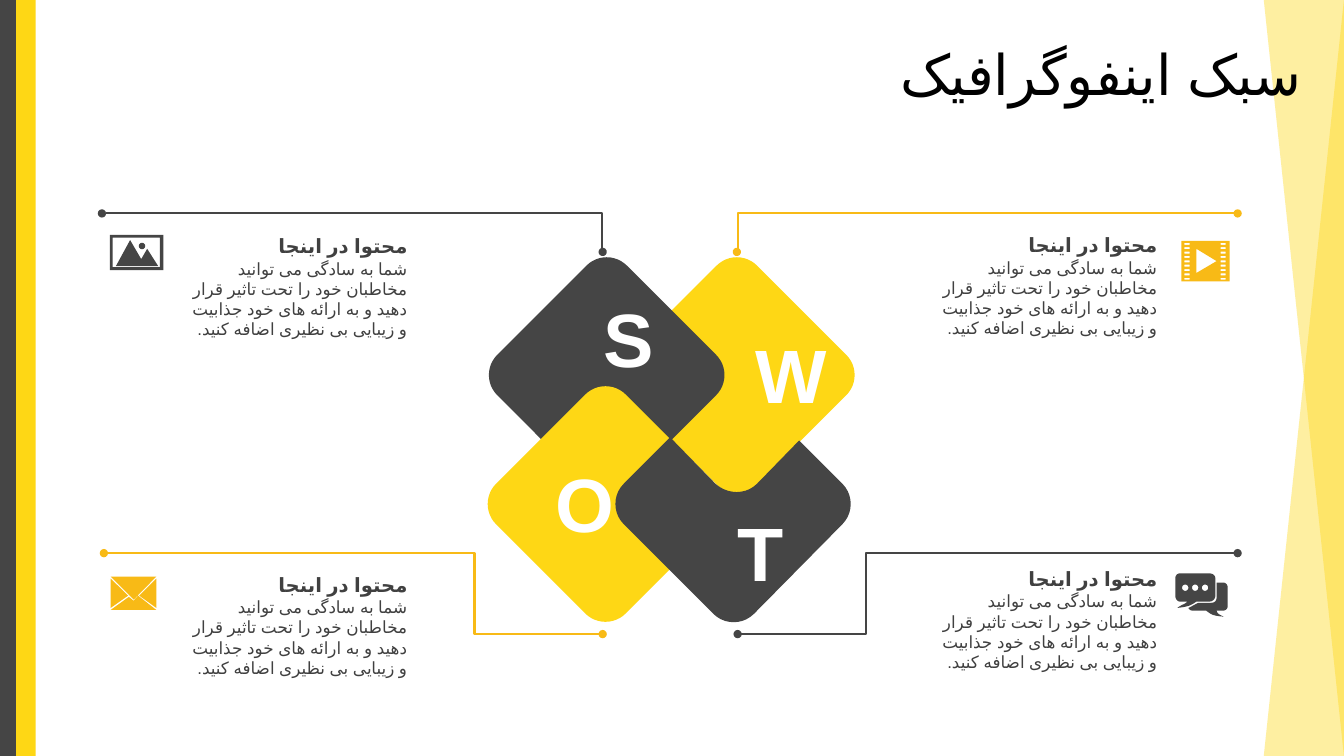
from math import cos, pi, sin

from lxml import etree
from pptx import Presentation
from pptx.dml.color import RGBColor
from pptx.enum.lang import MSO_LANGUAGE_ID
from pptx.enum.shapes import MSO_CONNECTOR, MSO_SHAPE
from pptx.enum.text import MSO_ANCHOR, MSO_AUTO_SIZE, PP_ALIGN
from pptx.oxml.ns import qn
from pptx.util import Cm, Pt

RECTANGLE = MSO_SHAPE.RECTANGLE
ROUNDED = MSO_SHAPE.ROUNDED_RECTANGLE
TRIANGLE = MSO_SHAPE.RIGHT_TRIANGLE
ELBOW = MSO_CONNECTOR.ELBOW
TOP, MIDDLE = MSO_ANCHOR.TOP, MSO_ANCHOR.MIDDLE
RIGHT = PP_ALIGN.RIGHT
GROW = MSO_AUTO_SIZE.SHAPE_TO_FIT_TEXT
FARSI = MSO_LANGUAGE_ID.FARSI

COLORS = {"yellow": "FED715", "dark": "454545", "amber": "F8BA16",
          "text": "404040", "white": "FFFFFF", "black": "000000"}
WIDTH, HEIGHT = 33.87, 19.05
HEADING = "محتوا در اینجا"
BODY = ("شما به سادگی می توانید مخاطبان خود را تحت تاثیر قرار دهید و به ارائه "
        "های خود جذابیت و زیبایی بی نظیری اضافه کنید.")


# Outline helpers, all in centimetres
def box(left, top, width, height):
    right, bottom = left + width, top + height
    return [(left, top), (right, top), (right, bottom), (left, bottom)]


def circle(x, y, radius, steps=24):
    return [(x + radius * cos(2 * pi * i / steps), y + radius * sin(2 * pi * i / steps))
            for i in range(steps)]


def curved(outline, steps=10):
    """Turn each six-number entry (a cubic curve) into short straight steps."""
    points = []
    for entry in outline:
        if len(entry) == 2:
            points.append(entry)
            continue
        knots = [points[-1], entry[:2], entry[2:4], entry[4:]]
        for step in range(1, steps + 1):
            t = step / steps
            weights = ((1 - t) ** 3, 3 * t * (1 - t) ** 2, 3 * t * t * (1 - t), t ** 3)
            points.append(tuple(sum(w * knot[axis] for w, knot in zip(weights, knots))
                                for axis in (0, 1)))
    return points


class SlideBuilder:
    font = "Arial"
    line_width = 1.5

    def __init__(self, slide):
        self.slide = slide
        self.shapes = slide.shapes

    def color(self, name):
        return RGBColor.from_string(COLORS[name])

    def paint(self, shape, color):
        shape.shadow.inherit = False
        shape.fill.solid()
        shape.fill.fore_color.rgb = self.color(color)
        shape.line.fill.background()

    def shape(self, kind, frame, color, rotation=0, corner=None, flips=(), alpha=None):
        shape = self.shapes.add_shape(kind, *map(Cm, frame))
        self.paint(shape, color)
        shape.rotation = rotation
        if corner is not None:
            shape.adjustments[0] = corner
        for flip in flips:
            shape._element.spPr.find(qn("a:xfrm")).set(flip, "1")
        if alpha is not None:
            fill = shape._element.spPr.find(qn("a:solidFill"))
            etree.SubElement(fill[0], qn("a:alpha")).set("val", str(alpha * 1000))

    def freeform(self, contours, color):
        contours = [[(Cm(x), Cm(y)) for x, y in contour] for contour in contours]
        builder = self.shapes.build_freeform(*contours[0][0], scale=1.0)
        for index, contour in enumerate(contours):
            if index:
                builder.move_to(*contour[0])
            builder.add_line_segments(contour[1:], close=True)
        self.paint(builder.convert_to_shape(), color)

    def text(self, words, frame, size, color, bold=False, anchor=TOP, grow=True, **spacing):
        text_frame = self.shapes.add_textbox(*map(Cm, frame)).text_frame
        text_frame.word_wrap = True
        text_frame.vertical_anchor = anchor
        if grow:
            text_frame.auto_size = GROW
        paragraph = text_frame.paragraphs[0]
        for name, value in {"alignment": RIGHT, **spacing}.items():
            setattr(paragraph, name, value)
        paragraph._p.get_or_add_pPr().set("rtl", "1")
        run = paragraph.add_run()
        run.text = words
        for name, value in {"name": self.font, "size": Pt(size), "bold": bold,
                            "language_id": FARSI}.items():
            setattr(run.font, name, value)
        run.font.color.rgb = self.color(color)
        etree.SubElement(run._r.get_or_add_rPr(), qn("a:cs")).set("typeface", self.font)

    def connector(self, start, end, bend, color):
        connector = self.shapes.add_connector(ELBOW, *map(Cm, start + end))
        connector.line.width = Pt(self.line_width)
        connector.line.color.rgb = self.color(color)
        properties = connector._element.spPr
        guides = properties.find(qn("a:prstGeom")).get_or_add_avLst()
        etree.SubElement(guides, qn("a:gd"), name="adj1", fmla=f"val {bend}")
        for end_name in ("a:headEnd", "a:tailEnd"):
            etree.SubElement(properties.find(qn("a:ln")), qn(end_name), type="oval")
        etree.SubElement(properties, qn("a:effectLst"))


def main():
    presentation = Presentation()
    presentation.slide_width, presentation.slide_height = Cm(WIDTH), Cm(HEIGHT)
    builder = SlideBuilder(presentation.slides.add_slide(presentation.slide_layouts[6]))

    # Side decoration
    edge = (31.85, 0, 2.02, HEIGHT)
    builder.shape(TRIANGLE, edge, "yellow", flips=("flipH", "flipV"), alpha=40)
    for left, color in ((0, "dark"), (0.41, "yellow")):
        builder.shape(RECTANGLE, (left, 0, 0.49, HEIGHT), color)
    builder.shape(TRIANGLE, edge, "yellow", flips=("flipH",), alpha=40)

    # Title
    builder.text("سبک اینفوگرافیک", (1.91, 0.94, 31.14, 2.01), 40, "black", anchor=MIDDLE,
                 grow=False, line_spacing=0.9, space_before=Pt(10))

    # Interlocking diamonds, the last one notched to pass under its neighbour
    for left, top, color in ((16.26, 7.14, "yellow"), (12.98, 7.14, "dark"),
                             (12.95, 10.39, "yellow")):
        builder.shape(ROUNDED, (left, top, 4.62, 4.62), color, rotation=315, corner=0.156)
    notched_diamond = [
        (16.89, 11.02), (18.03, 12.19), (18.34, 12.47, 18.8, 12.47, 19.08, 12.19),
        (20.14, 11.1), (21.23, 12.19), (21.51, 12.47, 21.51, 12.93, 21.23, 13.21),
        (19, 15.47), (18.72, 15.75, 18.26, 15.75, 17.98, 15.47),
        (15.72, 13.21), (15.44, 12.93, 15.44, 12.47, 15.72, 12.19)]
    builder.freeform([curved(notched_diamond)], "dark")
    for letter, left, top in (("S", 13.74, 7.24), ("W", 18.08, 8.15),
                              ("O", 12.73, 11.38), ("T", 16.99, 12.62)):
        builder.text(letter, (left, top, 3, 2.57), 54, "white", bold=True)

    # Text panels
    for left, top, width in ((4.32, 5.77, 6.2), (4.32, 14.3, 6.2),
                             (23.37, 5.74, 6.05), (23.37, 14.15, 6.05)):
        builder.text(HEADING, (left, top, width, 0.86), 14, "text", bold=True, anchor=MIDDLE)
        builder.text(BODY, (left, top + 0.62, width, 1.8), 12, "text")

    # Connectors from the diamonds to the panels
    for start, end, bend, color in (
            ((18.57, 6.35), (31.19, 5.38), 200, "amber"),
            ((18.59, 15.98), (31.19, 13.94), 25700, "dark"),
            ((15.19, 6.35), (2.57, 5.38), 200, "dark"),
            ((15.19, 15.98), (2.62, 13.94), 25700, "amber")):
        builder.connector(start, end, bend, color)

    # Envelope icon
    builder.freeform([
        [(3.48, 15.01), (3.94, 15.37), (2.79, 15.37), (3.25, 15.04), (3.37, 15.14)],
        [(3.94, 14.58), (3.94, 15.32), (3.51, 15.01)],
        [(2.79, 14.58), (3.23, 15.01), (2.79, 15.32)],
        [(2.79, 14.53), (3.94, 14.53), (3.37, 15.11)]], "amber")

    # Chat icon
    front_bubble = [
        (29.74, 14.45), (30.48, 14.45), (30.56, 14.45, 30.63, 14.5, 30.63, 14.58),
        (30.63, 15.01), (30.63, 15.09, 30.56, 15.16, 30.48, 15.16), (30.15, 15.16),
        (30, 15.27, 29.92, 15.29, 29.67, 15.32), (29.82, 15.21, 29.85, 15.24, 29.92, 15.16),
        (29.74, 15.16), (29.67, 15.16, 29.62, 15.09, 29.62, 15.01),
        (29.62, 14.58), (29.62, 14.5, 29.67, 14.45, 29.74, 14.45)]
    back_bubble = [
        (30.66, 14.68), (30.81, 14.68), (30.89, 14.68, 30.94, 14.73, 30.94, 14.81),
        (30.94, 15.27), (30.94, 15.34, 30.89, 15.39, 30.81, 15.39), (30.66, 15.39),
        (30.68, 15.44, 30.68, 15.47, 30.84, 15.54), (30.58, 15.52, 30.53, 15.49, 30.4, 15.39),
        (30.07, 15.39), (30.02, 15.39, 29.97, 15.37, 29.95, 15.32),
        (30.02, 15.29, 30.1, 15.24, 30.2, 15.19), (30.53, 15.19),
        (30.61, 15.19, 30.66, 15.14, 30.66, 15.06)]
    dots = [circle(29.87 + 0.25 * i, 14.81, 0.08) for i in range(3)]
    builder.freeform([curved(front_bubble), curved(back_bubble), *dots], "dark")

    # Landscape icon
    mountains = [(3.28, 6.05), (3.56, 6.53), (3.71, 6.27), (3.99, 6.71), (2.92, 6.71)]
    builder.freeform([box(2.77, 5.92, 1.35, 0.89), box(2.84, 5.99, 1.19, 0.74),
                      mountains, circle(3.58, 6.2, 0.08)], "dark")

    # Film icon
    holes = [box(left, 6.12 + 0.11 * row, 0.13, 0.05)
             for left in (29.85, 30.76) for row in range(9)]
    play = [(30.15, 6.27), (30.15, 6.88), (30.66, 6.58)]
    builder.freeform([box(29.77, 6.07, 1.22, 1.02), *holes, play], "amber")

    presentation.save("out.pptx")


if __name__ == "__main__":
    main()
